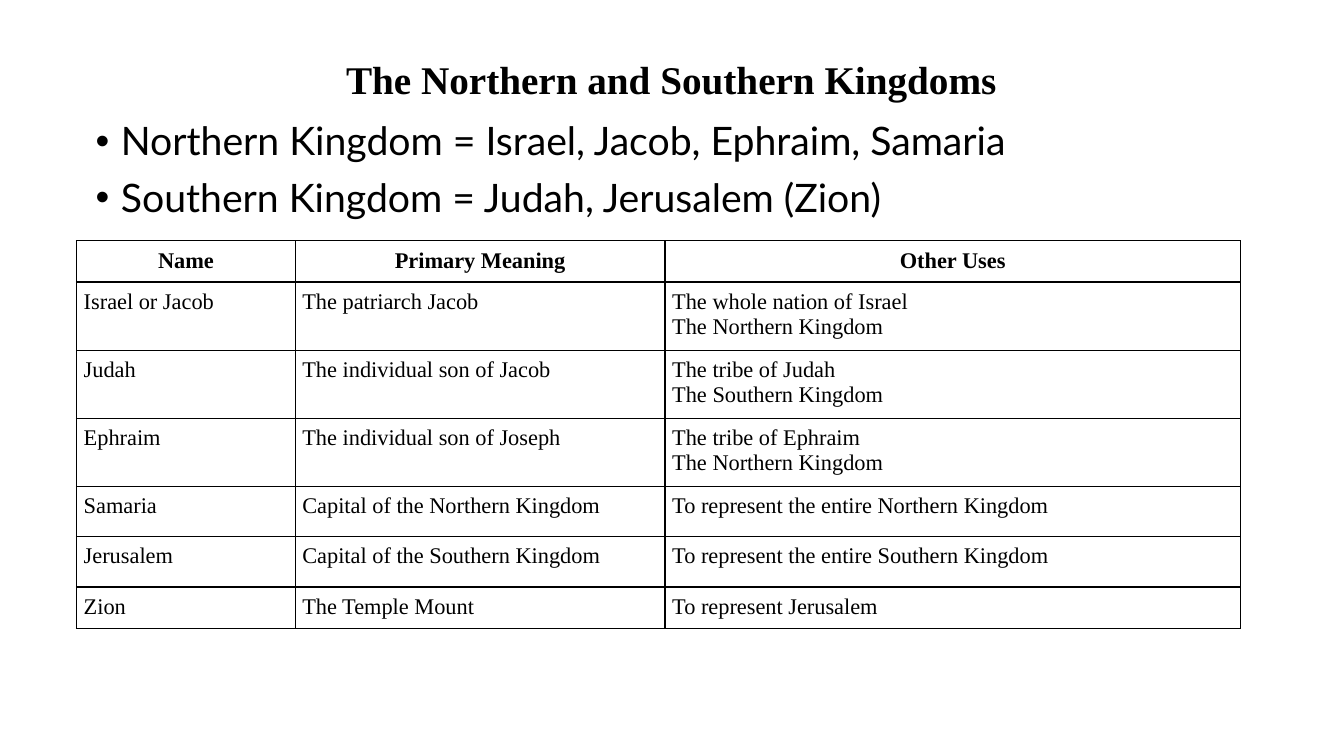
"""Build a slide on the names of the Northern and Southern Kingdoms."""
from lxml import etree
from pptx import Presentation
from pptx import util as u
from pptx.dml.color import RGBColor
from pptx.enum import text
from pptx.oxml.ns import qn

COLORS = {"ink": "000000", "paper": "FFFFFF"}
SERIF, SANS = "Times New Roman", "Lato"

KINGDOMS = [
    "Northern Kingdom = Israel, Jacob, Ephraim, Samaria",
    "Southern Kingdom = Judah, Jerusalem (Zion)",
]
NAMES = [
    ("Name", "Primary Meaning", "Other Uses"),
    ("Israel or Jacob", "The patriarch Jacob", "The whole nation of Israel\nThe Northern Kingdom"),
    ("Judah", "The individual son of Jacob", "The tribe of Judah\nThe Southern Kingdom"),
    ("Ephraim", "The individual son of Joseph", "The tribe of Ephraim\nThe Northern Kingdom"),
    ("Samaria", "Capital of the Northern Kingdom", "To represent the entire Northern Kingdom"),
    ("Jerusalem", "Capital of the Southern Kingdom", "To represent the entire Southern Kingdom"),
    ("Zion", "The Temple Mount", "To represent Jerusalem"),
]
COLUMN_WIDTHS = [5.51, 9.32, 14.5]
ROW_HEIGHTS = [0.81, 1.04, 1.27, 1.27, 1.27, 1.27, 0.81]


class KingdomSlide:
    def __init__(self, slide):
        self.slide = slide

    def style(self, paragraph, font, size, bold=False, centered=False):
        paragraph.font.name = font
        paragraph.font.size = u.Pt(size)
        paragraph.font.bold = bold
        paragraph.font.color.rgb = RGBColor.from_string(COLORS["ink"])
        paragraph.alignment = text.PP_ALIGN.CENTER if centered else text.PP_ALIGN.LEFT

    def text_frame(self, left, top, width, height, wording):
        box = self.slide.shapes.add_textbox(*map(u.Cm, (left, top, width, height)))
        frame = box.text_frame
        frame.word_wrap = True
        frame.text = wording
        for paragraph in frame.paragraphs:
            paragraph.line_spacing = 0.9
        return frame

    def title(self, wording, *place):
        frame = self.text_frame(*place, wording)
        frame.margin_top = u.Cm(0.5)
        self.style(frame.paragraphs[0], SERIF, 28, bold=True, centered=True)

    def bullets(self, lines, *place):
        for paragraph in self.text_frame(*place, "\n".join(lines)).paragraphs:
            self.style(paragraph, SANS, 28)
            paragraph.space_before = u.Pt(10)
            properties = paragraph._p.get_or_add_pPr()
            indent = u.Cm(0.64)
            properties.set("marL", str(indent))
            properties.set("indent", str(-indent))
            bullet_font = etree.Element(qn("a:buFont"), typeface="Arial")
            bullet = etree.Element(qn("a:buChar"), char="•")
            properties.insert_element_before(bullet_font, "a:tabLst", "a:defRPr", "a:extLst")
            properties.insert_element_before(bullet, "a:tabLst", "a:defRPr", "a:extLst")

    def borders(self, cell):
        properties = cell._tc.get_or_add_tcPr()
        for position, side in enumerate(("lnL", "lnR", "lnT", "lnB")):
            line = etree.Element(qn(f"a:{side}"), w=str(u.Pt(1)))
            fill = etree.SubElement(line, qn("a:solidFill"))
            etree.SubElement(fill, qn("a:srgbClr"), val=COLORS["ink"])
            properties.insert(position, line)

    def table(self, rows, left, top):
        size = sum(COLUMN_WIDTHS), sum(ROW_HEIGHTS)
        table = self.slide.shapes.add_table(
            len(rows), len(COLUMN_WIDTHS), *map(u.Cm, (left, top, *size))).table
        table.first_row = table.horz_banding = False
        for column, width in zip(table.columns, COLUMN_WIDTHS):
            column.width = u.Cm(width)
        for row, height in zip(table.rows, ROW_HEIGHTS):
            row.height = u.Cm(height)
        for row_index, row in enumerate(rows):
            heading = row_index == 0
            for column_index, wording in enumerate(row):
                cell = table.cell(row_index, column_index)
                cell.text = wording
                cell.margin_left = cell.margin_right = u.Cm(0.18)
                cell.margin_top = cell.margin_bottom = u.Cm(0.18)
                cell.fill.solid()
                cell.fill.fore_color.rgb = RGBColor.from_string(COLORS["paper"])
                self.borders(cell)
                for paragraph in cell.text_frame.paragraphs:
                    self.style(paragraph, SERIF, 16, bold=heading, centered=heading)


def main():
    deck = Presentation()
    deck.slide_width, deck.slide_height = u.Cm(33.87), u.Cm(19.05)
    page = KingdomSlide(deck.slides.add_slide(deck.slide_layouts[6]))
    page.title("The Northern and Southern Kingdoms", 5.97, 1.02, 21.89, 4.29)
    page.bullets(KINGDOMS, 2.16, 2.95, 29.34, 14.22)
    page.table(NAMES, 1.93, 6.07)
    deck.save("out.pptx")


if __name__ == "__main__":
    main()
